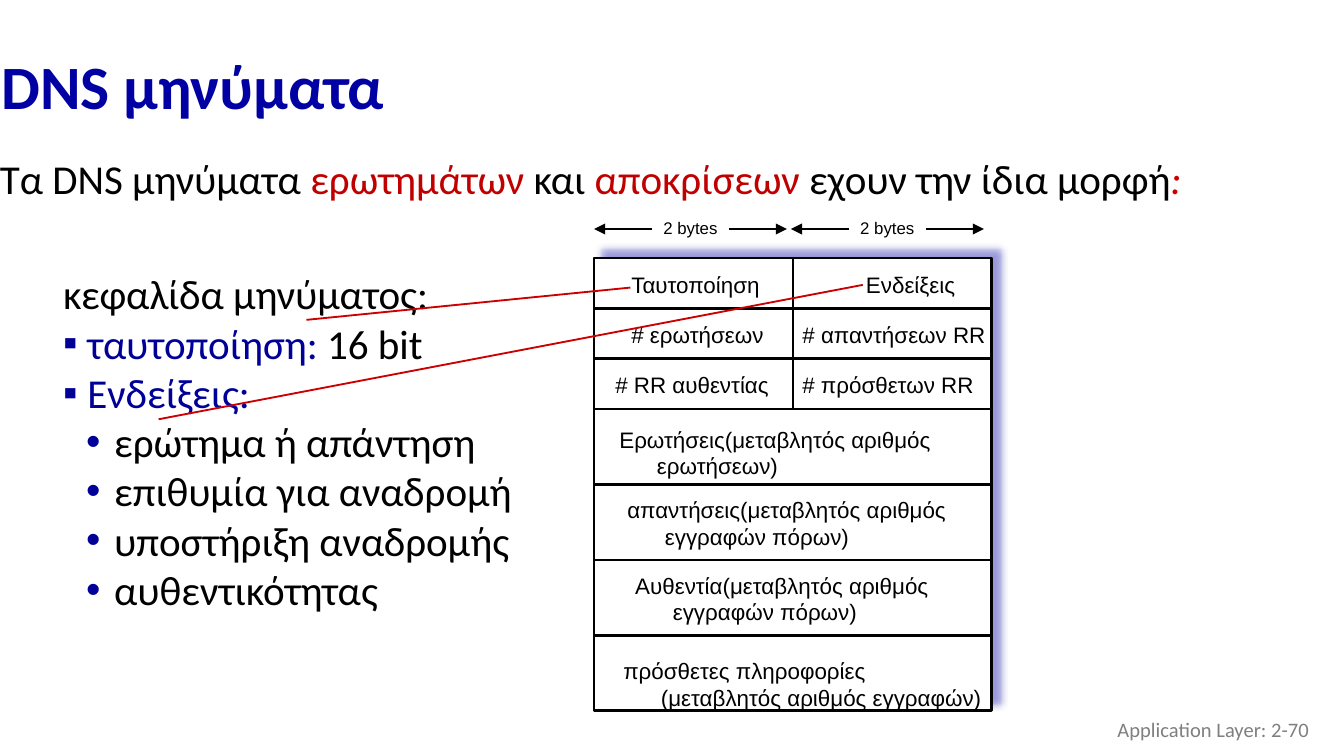
from lxml import etree
from pptx import Presentation
from pptx.dml.color import RGBColor
from pptx.enum.shapes import MSO_CONNECTOR, MSO_SHAPE
from pptx.enum.text import MSO_ANCHOR, PP_ALIGN
from pptx.oxml.ns import qn
from pptx.util import Inches, Pt

STRAIGHT = MSO_CONNECTOR.STRAIGHT
RECT = MSO_SHAPE.RECTANGLE
MIDDLE = MSO_ANCHOR.MIDDLE
TOP = MSO_ANCHOR.TOP
LEFT, RIGHT = PP_ALIGN.LEFT, PP_ALIGN.RIGHT
WIDE = 10
HIGH = WIDE * 9 / 16
BLACK, NAVY, BLUE = "000000", "0000A3", "000099"
RED, DARK, GRAY = "CC0000", "C00000", "7F7F7F"
UNITS = 18
RULES = (2, 4, 6, 9, 12, 15)
CELLS = (
    ("Ταυτοποίηση", 0.07, 0.3, 0.41),
    ("Ενδείξεις", 0.66, 0.3, 0.29),
    ("# ερωτήσεων", 0.07, 2.3, 0.41),
    ("# απαντήσεων RR", 0.5, 2.3, 0.55),
    ("# RR αυθεντίας", 0.03, 4.3, 0.44),
    ("# πρόσθετων RR", 0.5, 4.3, 0.49),
    ("Ερωτήσεις(μεταβλητός αριθμός ερωτήσεων)", 0.04, 6.45, 0.91),
    ("απαντήσεις(μεταβλητός αριθμός εγγραφών πόρων)", 0.06, 9.25, 0.86),
    ("Αυθεντία(μεταβλητός αριθμός εγγραφών πόρων)", 0.08, 12.25, 0.86),
    ("πρόσθετες πληροφορίες (μεταβλητός αριθμός εγγραφών)", 0.05, 15.65, 0.96),
)
INTRO = (
    ("Τα DNS μηνύματα ", BLACK),
    ("ερωτημάτων ", DARK),
    ("και ", BLACK),
    ("αποκρίσεων ", DARK),
    ("εχουν την ίδια μορφή", BLACK),
    (":", RED),
)
POINTS = (
    (0, "", (("κεφαλίδα μηνύματος:", BLACK),)),
    (0, "▪", (("ταυτοποίηση:", BLUE), (" 16 bit", BLACK))),
    (0, "▪", (("Ενδείξεις:", BLUE),)),
    (1, "•", (("ερώτημα ή απάντηση", BLACK),)),
    (1, "•", (("επιθυμία για αναδρομή", BLACK),)),
    (1, "•", (("υποστήριξη αναδρομής", BLACK),)),
    (1, "•", (("αυθεντικότητας", BLACK),)),
)


def color(code):
    return RGBColor.from_string(code)


def add(node, tag, **attrs):
    return etree.SubElement(node, qn(tag), attrs)


def part(box, x, y, w, h):
    left, top, wide, high = box
    return left + x * wide, top + y * high, w * wide, h * high


def place(shape, box):
    shape.left, shape.top, shape.width, shape.height = map(Inches, box)


def frame(shape, anchor=TOP):
    body = shape.text_frame
    body.word_wrap = True
    body.vertical_anchor = anchor
    body.margin_left = body.margin_right = Inches(0.07)
    body.margin_top = body.margin_bottom = Inches(0.04)
    return body


def style(run, size, code, face="Calibri"):
    run.font.size = Pt(size)
    run.font.name = face
    run.font.color.rgb = color(code)


def indent(para, margin, first):
    props = para._p.get_or_add_pPr()
    props.set("marL", str(Inches(margin)))
    props.set("indent", str(Inches(first)))
    return props


def write(para, runs, size):
    for text, code in runs:
        run = para.add_run()
        run.text = text
        style(run, size, code)


def text_box(slide, box, anchor=TOP):
    return frame(slide.shapes.add_textbox(*map(Inches, box)), anchor)


def label(slide, box, text, size):
    para = text_box(slide, box).paragraphs[0]
    para.text = text
    indent(para, 0.28, -0.28)
    style(para.runs[0], size, BLACK, "Arial")


def line(slide, box, start, end, code, width, arrow=False):
    ends = [part(box, x, y, 0, 0)[:2] for x, y in (start, end)]
    link = slide.shapes.add_connector(STRAIGHT, *map(Inches, ends[0] + ends[1]))
    link.line.color.rgb = color(code)
    link.line.width = Pt(width)
    if arrow:
        add(link.line._ln, "a:tailEnd", type="triangle")
    add(link._element.spPr, "a:effectLst")


def heading(slide, box):
    title = slide.shapes.title
    place(title, box)
    para = frame(title, MIDDLE).paragraphs[0]
    para.text = "DNS μηνύματα"
    para.alignment = LEFT
    para.line_spacing = 0.9
    style(para.runs[0], 33, NAVY)
    para.runs[0].font.bold = True


def intro(slide, box):
    para = text_box(slide, box).paragraphs[0]
    indent(para, 0.11, 0)
    para.line_spacing = 0.9
    write(para, INTRO, 22)
    para.runs[-1].font.italic = True


def bullets(slide, box):
    body = text_box(slide, box)
    for i, (level, mark, runs) in enumerate(POINTS):
        para = body.add_paragraph() if i else body.paragraphs[0]
        para.level = level
        if mark:
            props = indent(para, 0.18 + 0.2 * level, -0.21)
            tint = add(props, "a:buClr")
            add(tint, "a:srgbClr", val=BLUE)
            add(props, "a:buFont", typeface="Arial")
            add(props, "a:buChar", char=mark)
        else:
            indent(para, 0.28, -0.28)
        write(para, runs, 22)


def panel(slide, box):
    back = slide.shapes.add_shape(RECT, *map(Inches, box))
    back.fill.solid()
    back.fill.fore_color.rgb = color("FFFFFF")
    back.line.color.rgb = color(BLACK)
    back.line.width = Pt(1.5)
    back.shadow.inherit = False
    effect = back._element.spPr.find(qn("a:effectLst"))
    shade = add(effect, "a:outerShdw", blurRad=str(Pt(4)), dist=str(Pt(6)),
                dir=str(315 * 60000), algn="ctr", rotWithShape="0")
    tint = add(shade, "a:srgbClr", val=NAVY)
    add(tint, "a:alpha", val="40000")


def message(slide, box):
    panel(slide, box)
    for unit in RULES:
        line(slide, box, (0, unit / UNITS), (1, unit / UNITS), BLACK, 1.5)
    line(slide, box, (0.5, 0), (0.5, 6 / UNITS), BLACK, 1.5)
    for text, x, unit, share in CELLS:
        rows = 1.5 if unit < 6 else 2.56
        label(slide, part(box, x, unit / UNITS, share, rows / UNITS), text, 12)


def ruler(slide, box):
    for half in range(2):
        area = part(box, half * 0.5, 0, 0.49, 1)
        label(slide, part(area, 0.31, 0, 0.54, 1), "2 bytes", 9)
        for start, end in ((0.7, 1), (0.3, 0)):
            line(slide, area, (start, 0.3), (end, 0.3), BLACK, 0.75, True)


def links(slide, box):
    for start, end in (((0.21, 0.26), (0.67, 0.02)), ((0, 1), (1, 0))):
        line(slide, box, start, end, RED, 1)


def footer(slide, box):
    para = text_box(slide, box, MIDDLE).paragraphs[0]
    para.alignment = RIGHT
    write(para, (("Application Layer: 2-70", GRAY),), 11)


def main():
    deck = Presentation()
    deck.slide_width, deck.slide_height = Inches(WIDE), Inches(HIGH)
    slide = deck.slides.add_slide(deck.slide_layouts[5])
    table = (4.42, 1.92, 2.96, 3.37)
    message(slide, table)
    ruler(slide, part(table, 0, -0.1, 0.99, 0.12))
    heading(slide, (-0.06, 0.3, 8.62, 0.73))
    intro(slide, (-0.18, 1.14, 9.43, 0.42))
    bullets(slide, (0.4, 1.96, 3.85, 3.15))
    links(slide, (1.18, 2.12, 5.24, 1))
    footer(slide, (7.56, 5.28, 2.25, 0.3))
    deck.save("out.pptx")


if __name__ == "__main__":
    main()
